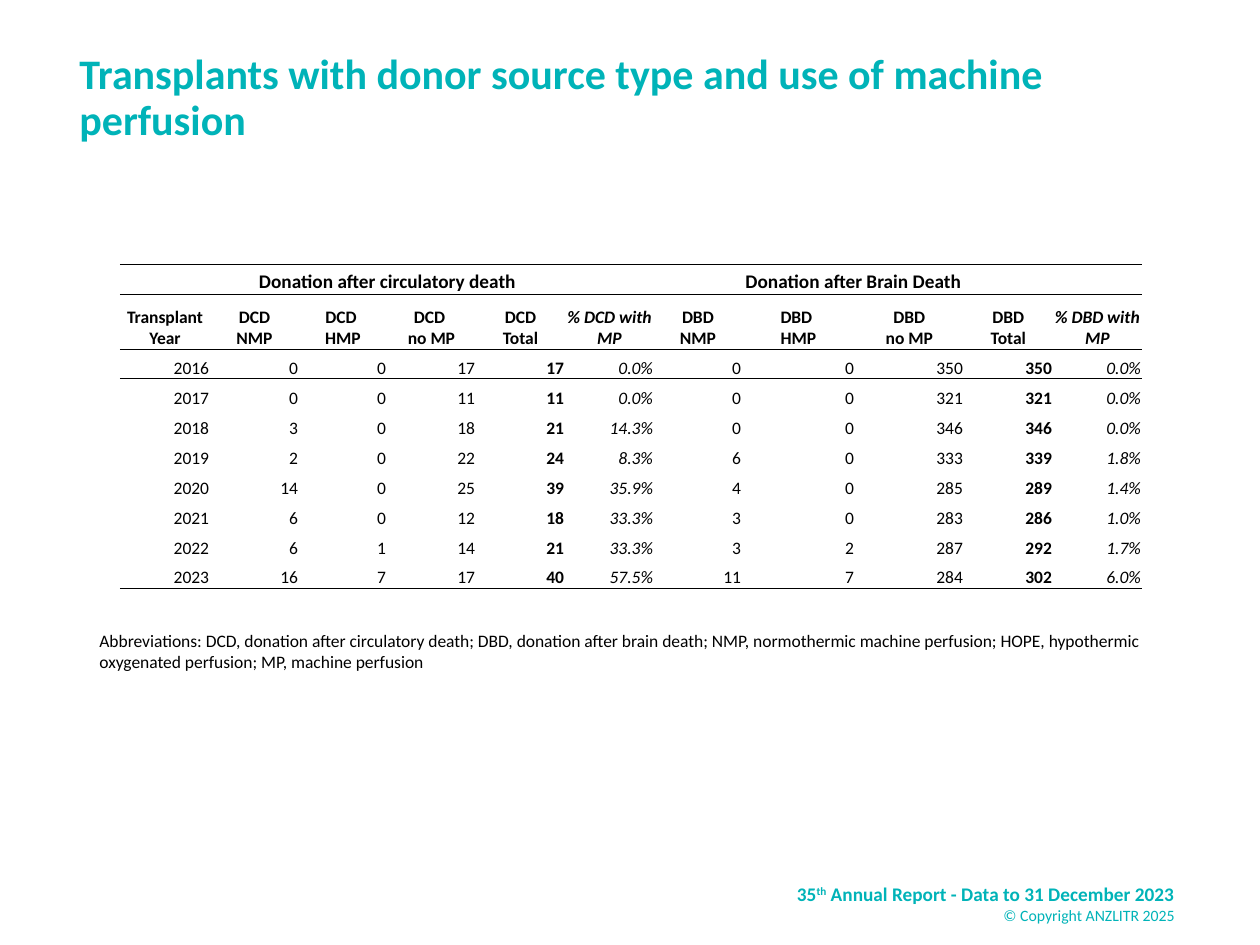
from lxml import etree
from pptx import Presentation
from pptx.dml.color import RGBColor
from pptx.enum.text import MSO_ANCHOR, PP_ALIGN
from pptx.oxml.ns import qn
from pptx.util import Pt

PX = 914400 // 126
LEFT, CENTER, RIGHT = PP_ALIGN.LEFT, PP_ALIGN.CENTER, PP_ALIGN.RIGHT
TOP, MIDDLE, BOTTOM = MSO_ANCHOR.TOP, MSO_ANCHOR.MIDDLE, MSO_ANCHOR.BOTTOM
NO_STYLE = "{2D5ABB26-0587-4C30-8999-92F81FD0307C}"
THEME = {
    "font": "Calibri", "teal": "00B3B8", "black": "000000",
    "title": 24, "group": 11, "body": 10, "footer": 11, "copyright": 9, "rule": 0.5,
}


def format_paragraph(paragraph, size, color, align=LEFT, bold=False, italic=False):
    paragraph.alignment = align
    for run in paragraph.runs:
        run.font.name = THEME["font"]
        run.font.size = Pt(size)
        run.font.color.rgb = RGBColor.from_string(color)
        run.font.bold = bold
        run.font.italic = italic


def add_text_box(left, top, width, height, lines, anchor=TOP):
    box = slide.shapes.add_textbox(left * PX, top * PX, width * PX, height * PX)
    frame = box.text_frame
    frame.word_wrap = True
    frame.vertical_anchor = anchor
    frame.text = "\n".join(lines)
    return frame


presentation = Presentation()
presentation.slide_width = 1260 * PX
presentation.slide_height = 945 * PX
slide = presentation.slides.add_slide(presentation.slide_layouts[6])

# Footer
footer = add_text_box(762, 876, 425, 50, ["35", "© Copyright ANZLITR 2025"])
report_line, copyright_line = footer.paragraphs
ordinal = report_line.add_run()
ordinal.text = "th"
report_line.add_run().text = " Annual Report - Data to 31 December 2023"
format_paragraph(report_line, THEME["footer"], THEME["teal"], RIGHT, bold=True)
ordinal.font._element.set("baseline", "30000")
format_paragraph(copyright_line, THEME["copyright"], THEME["teal"], RIGHT)

# Title
title = add_text_box(67, 33, 1126, 132, [
    "Transplants with donor source type and use of machine perfusion"], MIDDLE)
title.paragraphs[0].line_spacing = 0.9
format_paragraph(title.paragraphs[0], THEME["title"], THEME["teal"], bold=True)

# Abbreviations
abbreviations = add_text_box(87, 624, 1106, 55, [
    "Abbreviations: DCD, donation after circulatory death; DBD, donation after brain death; "
    "NMP, normothermic machine perfusion; HOPE, hypothermic oxygenated perfusion; "
    "MP, machine perfusion"])
format_paragraph(abbreviations.paragraphs[0], THEME["body"], THEME["black"])

# Table content; \v is a line break inside a paragraph
rows = [
    ["", "Donation after circulatory death", "", "", "",
     "Donation after Brain Death", "", "", "", "", ""],
    ["Transplant Year", "DCD\vNMP", "DCD \vHMP", "DCD \vno MP", "DCD\vTotal", "% DCD with MP",
     "DBD\vNMP", "DBD \vHMP", "DBD\vno MP", "DBD\vTotal", "% DBD with MP"],
    ["2016", "0", "0", "17", "17", "0.0%", "0", "0", "350", "350", "0.0%"],
    ["2017", "0", "0", "11", "11", "0.0%", "0", "0", "321", "321", "0.0%"],
    ["2018", "3", "0", "18", "21", "14.3%", "0", "0", "346", "346", "0.0%"],
    ["2019", "2", "0", "22", "24", "8.3%", "6", "0", "333", "339", "1.8%"],
    ["2020", "14", "0", "25", "39", "35.9%", "4", "0", "285", "289", "1.4%"],
    ["2021", "6", "0", "12", "18", "33.3%", "3", "0", "283", "286", "1.0%"],
    ["2022", "6", "1", "14", "21", "33.3%", "3", "2", "287", "292", "1.7%"],
    ["2023", "16", "7", "17", "40", "57.5%", "11", "7", "284", "302", "6.0%"],
]
column_widths = [90, 89, 88, 89, 89, 89, 88, 113, 109, 89, 89]
row_heights = [30, 55] + [30] * 8
total_columns, percent_columns = (4, 9), (5, 10)
last_row = len(rows) - 1

# Table grid
table_shape = slide.shapes.add_table(
    len(rows), len(column_widths), 120 * PX, 264 * PX,
    sum(column_widths) * PX, sum(row_heights) * PX)
table = table_shape.table
table.first_row = table.horz_banding = False
table._tbl.tblPr.find(qn("a:tableStyleId")).text = NO_STYLE
for column, width in zip(table.columns, column_widths):
    column.width = width * PX
for row, height in zip(table.rows, row_heights):
    row.height = height * PX
table.cell(0, 1).merge(table.cell(0, 4))
table.cell(0, 5).merge(table.cell(0, 10))

# Table cells
for row_index, row in enumerate(rows):
    is_header = row_index < 2
    size = THEME["group"] if row_index == 0 else THEME["body"]
    edges = []
    if row_index <= 2:
        edges.append("a:lnT")
    if is_header or row_index == last_row:
        edges.append("a:lnB")
    for column_index, text in enumerate(row):
        cell = table.cell(row_index, column_index)
        cell.margin_left = cell.margin_right = cell.margin_top = PX
        cell.margin_bottom = 0
        cell.vertical_anchor = BOTTOM
        cell.fill.background()
        paragraph = cell.text_frame.paragraphs[0]
        if text:
            paragraph.text = text
            format_paragraph(
                paragraph, size, THEME["black"], CENTER if is_header else RIGHT,
                bold=is_header or column_index in total_columns,
                italic=row_index > 0 and column_index in percent_columns)
        else:
            etree.SubElement(paragraph._p, qn("a:endParaRPr"), sz=str(size * 100))
        properties = cell._tc.get_or_add_tcPr()
        for position, edge in enumerate(edges):
            line = etree.Element(qn(edge), w=str(Pt(THEME["rule"])))
            fill = etree.SubElement(line, qn("a:solidFill"))
            etree.SubElement(fill, qn("a:srgbClr"), val=THEME["black"])
            properties.insert(position, line)

presentation.save("out.pptx")
